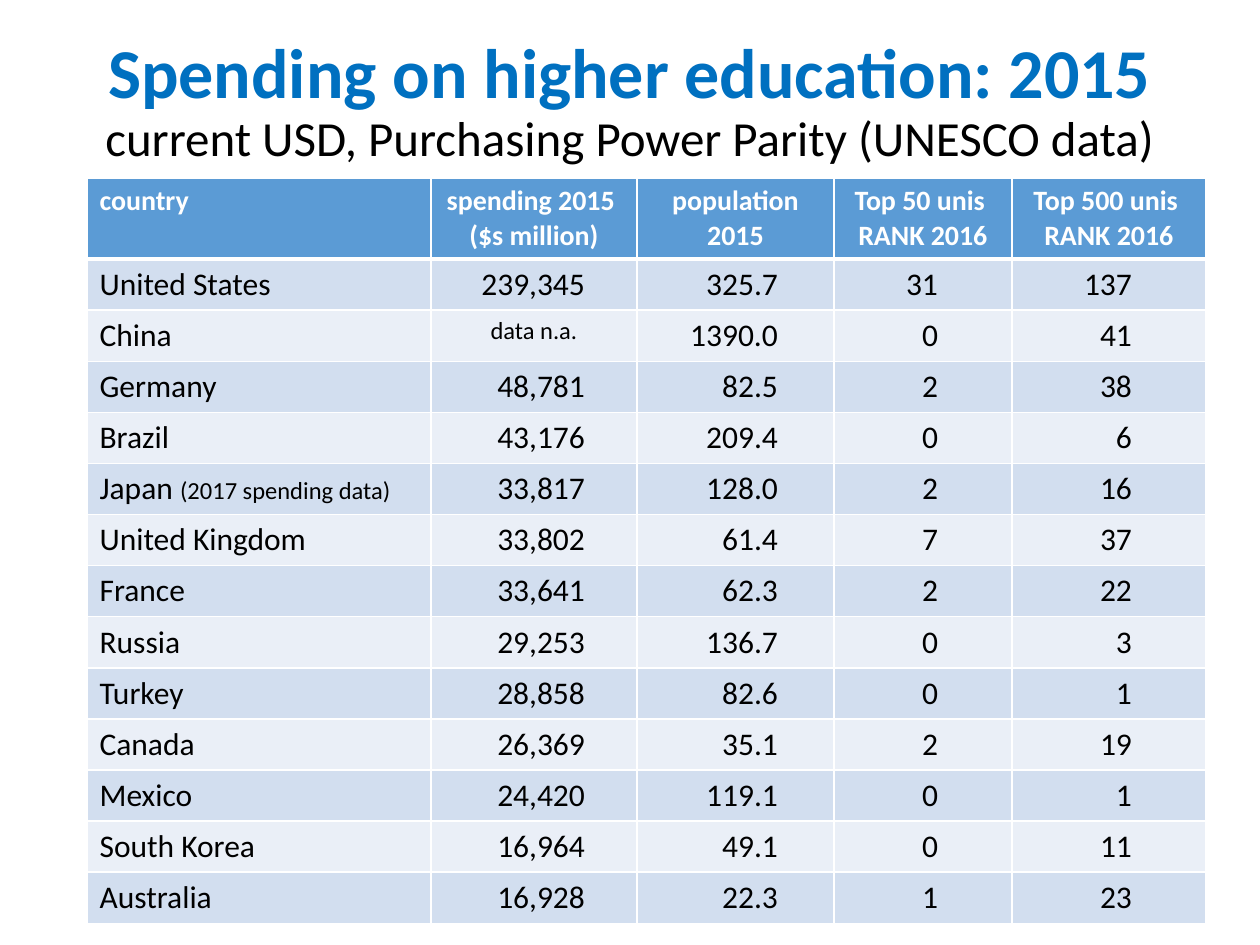
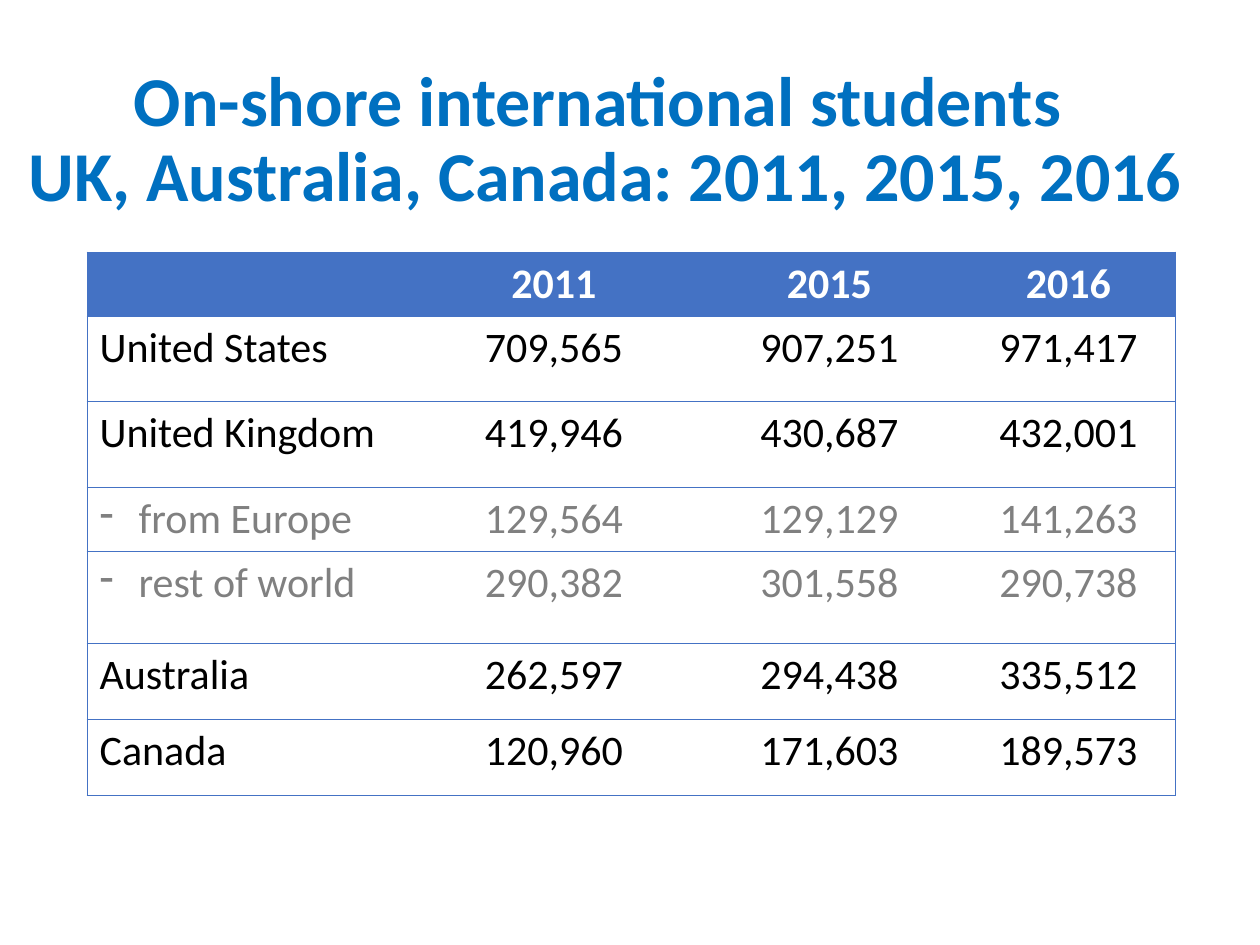
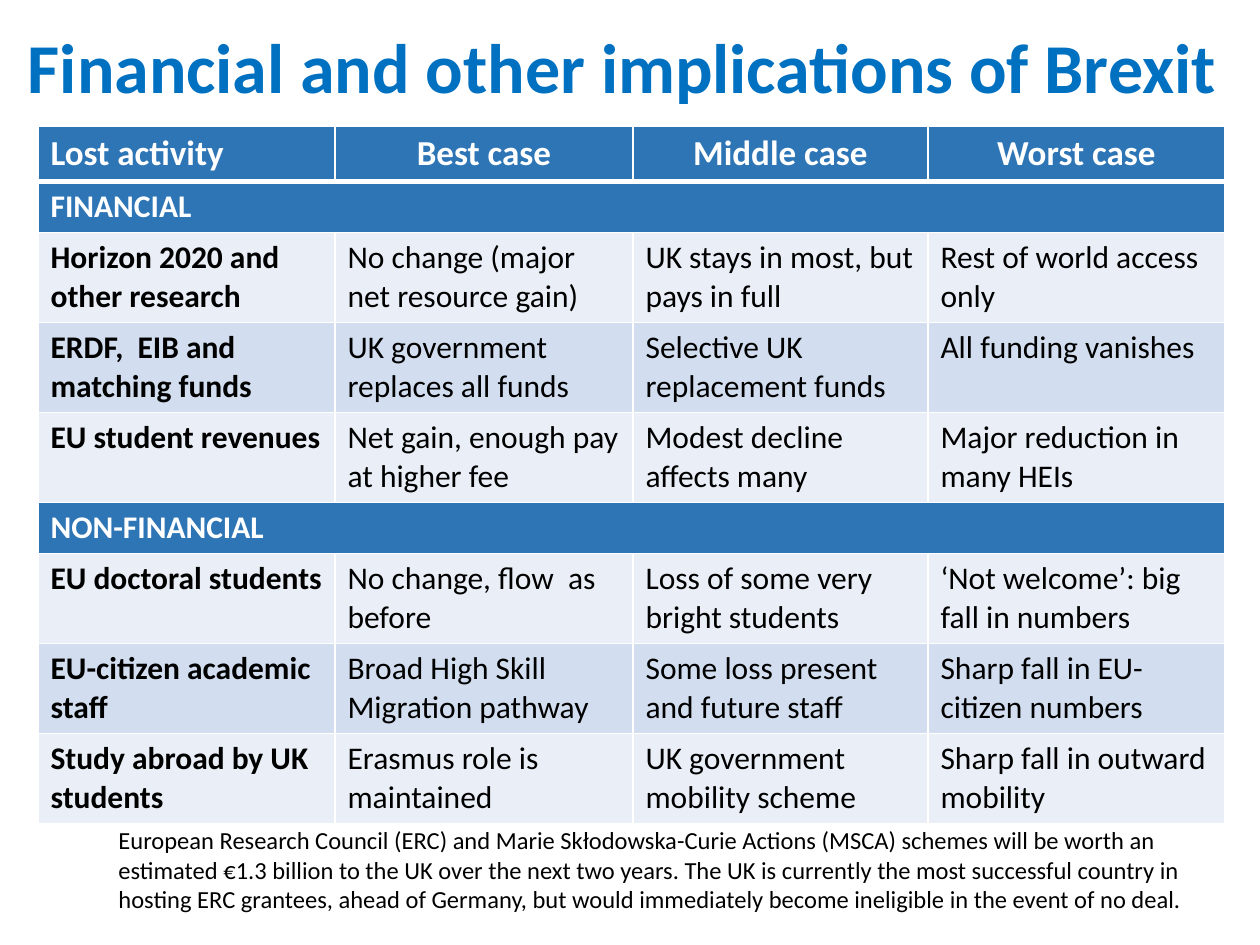
"""Three table slides on higher education spending, students and Brexit."""
from lxml.etree import SubElement as Sub
from pptx import Presentation
from pptx.dml.color import RGBColor as RGB
from pptx.enum.text import MSO_ANCHOR as Anchor, MSO_AUTO_SIZE as Auto, PP_ALIGN as Align
from pptx.oxml.ns import qn
from pptx.util import Pt

PX = 914400 / 126
INK = {"title": "0070C0", "black": "000000", "white": "FFFFFF", "gray": "808080",
       "head": "5B9BD5", "deep": "2E75B6", "royal": "4472C4",
       "dark": "D2DEEF", "light": "EAEFF7"}
BANDS = ["light", "dark"]


def write(par, text, ink="black", align=Align.LEFT, **font):
    """Add one formatted run to a paragraph."""
    par.alignment = align
    run = par.add_run()
    run.text = text
    run.font.color.rgb = RGB.from_string(INK[ink])
    for key, val in ({"name": "Calibri", "bold": False} | font).items():
        setattr(run.font, key, val)


def grid(page, left, top, cols, rows, fills, edge):
    """Add a table with sized tracks, row fills and cell borders."""
    box = [round(n * PX) for n in (left, top, sum(cols), sum(rows))]
    table = page.shapes.add_table(len(rows), len(cols), *box).table
    table.first_row = table.horz_banding = False
    for col, size in zip(table.columns, cols):
        col.width = round(size * PX)
    for r, size in enumerate(rows):
        table.rows[r].height = round(size * PX)
        for c in range(len(cols)):
            cell = table.cell(r, c)
            props = cell._tc.get_or_add_tcPr()
            for side, (ink, width) in edge(r, c).items():
                line = Sub(props, qn(f"a:ln{side}"), w=str(Pt(width)))
                if ink:
                    Sub(Sub(line, qn("a:solidFill")), qn("a:srgbClr"), val=INK[ink])
                else:
                    Sub(line, qn("a:noFill"))
            if fills[r]:
                cell.fill.solid()
                cell.fill.fore_color.rgb = RGB.from_string(INK[fills[r]])
            else:
                cell.fill.background()
    return table


deck = Presentation()
deck.slide_width, deck.slide_height = round(1260 * PX), round(945 * PX)

main = {"ink": "title", "size": Pt(40), "bold": True}
sub = {"ink": "black", "size": Pt(28)}
titles = [
    ((6, 11, 1247, 183), [("Spending on higher education: 2015", main),
                          ("current USD, Purchasing Power Parity (UNESCO data)", sub)]),
    ((0, 50, 1211, 183), [("On-shore international students ", main),
                          ("UK, Australia, Canada: 2011, 2015, 2016", main)]),
    ((0, 13, 1244, 115), [("Financial and other implications of Brexit", main)]),
]
pages = []
for box, lines in titles:
    page = deck.slides.add_slide(deck.slide_layouts[5])
    title = page.shapes.title
    title.left, title.top, title.width, title.height = [round(n * PX) for n in box]
    frame = title.text_frame
    frame.word_wrap, frame.auto_size = True, Auto.NONE
    frame.vertical_anchor = Anchor.MIDDLE
    par = frame.paragraphs[0]
    par.line_spacing = 0.9
    for i, (text, style) in enumerate(lines):
        if i:
            par.add_line_break()
        write(par, text, align=Align.CENTER, **style)
    pages.append(page)


spend = [
    ("United States", "239,345", "325.7", "31", "137"),
    ("China", "data n.a.", "1390.0", "0", "41"),
    ("Germany", "48,781", "82.5", "2", "38"),
    ("Brazil", "43,176", "209.4", "0", "6"),
    ("Japan ", "33,817", "128.0", "2", "16"),
    ("United Kingdom", "33,802", "61.4", "7", "37"),
    ("France", "33,641", "62.3", "2", "22"),
    ("Russia", "29,253", "136.7", "0", "3"),
    ("Turkey", "28,858", "82.6", "0", "1"),
    ("Canada", "26,369", "35.1", "2", "19"),
    ("Mexico", "24,420", "119.1", "0", "1"),
    ("South Korea", "16,964", "49.1", "0", "11"),
    ("Australia", "16,928", "22.3", "1", "23"),
]
heads = [["country"], ["spending 2015 ", "($s million)"], ["population 2015"],
         ["Top 50 unis ", "RANK 2016"], ["Top 500 unis ", "RANK 2016"]]
white = lambda r, c: {"L": ("white", 1), "R": ("white", 1),
                      "T": ("white", 3 if r == 1 else 1),
                      "B": ("white", 3 if r == 0 else 1)}
fills = ["head"] + [BANDS[r % 2] for r in range(1, 14)]
table = grid(pages[0], 87, 178, [344, 206, 197, 178, 194], [81] + [51] * 13, fills, white)
for c, lines in enumerate(heads):
    frame = table.cell(0, c).text_frame
    for i, text in enumerate(lines):
        par = frame.add_paragraph() if i else frame.paragraphs[0]
        write(par, text, "white", Align.CENTER if c else Align.LEFT, size=Pt(16), bold=True)
insets = [12, 52, 56, 74, 74]
for r, row in enumerate(spend, 1):
    for c, text in enumerate(row):
        cell = table.cell(r, c)
        par = cell.text_frame.paragraphs[0]
        if text == "data n.a.":
            write(par, text, align=Align.CENTER, size=Pt(14))
            continue
        cell.margin_right = round(insets[c] * PX)
        write(par, text, align=Align.RIGHT if c else Align.LEFT, size=Pt(18))
        if text == "Japan ":
            write(par, "(2017 spending data)", size=Pt(14))


study = [
    ("", "2011", "2015", "2016"),
    ("United States", "709,565", "907,251", "971,417"),
    ("United Kingdom", "419,946", "430,687", "432,001"),
    ("from Europe", "129,564", "129,129", "141,263"),
    ("rest of world", "290,382", "301,558", "290,738"),
    ("Australia", "262,597", "294,438", "335,512"),
    ("Canada", "120,960", "171,603", "189,573"),
]
ruled = lambda r, c: {"L": (None if c else "royal", 0.5),
                      "R": ("royal" if c == 3 else None, 0.5),
                      "T": ("royal", 0.5), "B": ("royal", 0.5)}
table = grid(pages[1], 87, 252, [324, 286, 265, 213], [64, 85, 86, 64, 92, 76, 77],
             ["royal"] + [None] * 6, ruled)
for r, row in enumerate(study):
    part = r in (3, 4)
    ink = "white" if r == 0 else "gray" if part else "black"
    for c, text in enumerate(row):
        if not text:
            continue
        par = table.cell(r, c).text_frame.paragraphs[0]
        write(par, text, ink, Align.CENTER if c else Align.LEFT, size=Pt(24), bold=r == 0)
        if part and c == 0:
            props = par._p.get_or_add_pPr()
            step = round(39 * PX)
            props.set("marL", str(step))
            props.set("indent", str(-step))
            Sub(props, qn("a:buChar"), char="-")


cases = [
    ("Lost activity", "Best case", "Middle case", "Worst case"),
    ("FINANCIAL",),
    ("Horizon 2020 and other research", "No change (major net resource gain)",
     "UK stays in most, but pays in full", "Rest of world access only"),
    ("ERDF,  EIB and matching funds", "UK government replaces all funds",
     "Selective UK replacement funds", "All funding vanishes"),
    ("EU student revenues", "Net gain, enough pay at higher fee",
     "Modest decline affects many", "Major reduction in many HEIs"),
    ("NON-FINANCIAL",),
    ("EU doctoral students", "No change, flow  as before",
     "Loss of some very bright students", "‘Not welcome’: big fall in numbers"),
    ("EU-citizen academic staff", "Broad High Skill Migration pathway",
     "Some loss present and future staff", "Sharp fall in EU-citizen numbers"),
    ("Study abroad by UK students", "Erasmus role is maintained",
     "UK government mobility scheme", "Sharp fall in outward mobility"),
]
fills = ["deep", "deep", "light", "dark", "light", "deep", "light", "dark", "light"]
rows = [55] + [51 if len(row) == 1 else 90 for row in cases[1:]]
table = grid(pages[2], 38, 126, [297, 298, 295, 297], rows, fills, white)
for r, row in enumerate(cases):
    if len(row) == 1:
        table.cell(r, 0).merge(table.cell(r, 3))
    band = fills[r] == "deep"
    for c, text in enumerate(row):
        write(table.cell(r, c).text_frame.paragraphs[0], text, "white" if band else "black",
              Align.CENTER if r == 0 and c else Align.LEFT,
              size=Pt(18 if r else 20), bold=band or c == 0)

note = pages[2].shapes.add_textbox(*[round(n * PX) for n in (106, 819, 1101, 102)])
note.text_frame.word_wrap = True
write(note.text_frame.paragraphs[0],
      "European Research Council (ERC) and Marie Skłodowska-Curie Actions (MSCA) schemes "
      "will be worth an estimated €1.3 billion to the UK over the next two years. The UK is "
      "currently the most successful country in hosting ERC grantees, ahead of Germany, but "
      "would immediately become ineligible in the event of no deal.", size=Pt(14))

deck.save("out.pptx")
